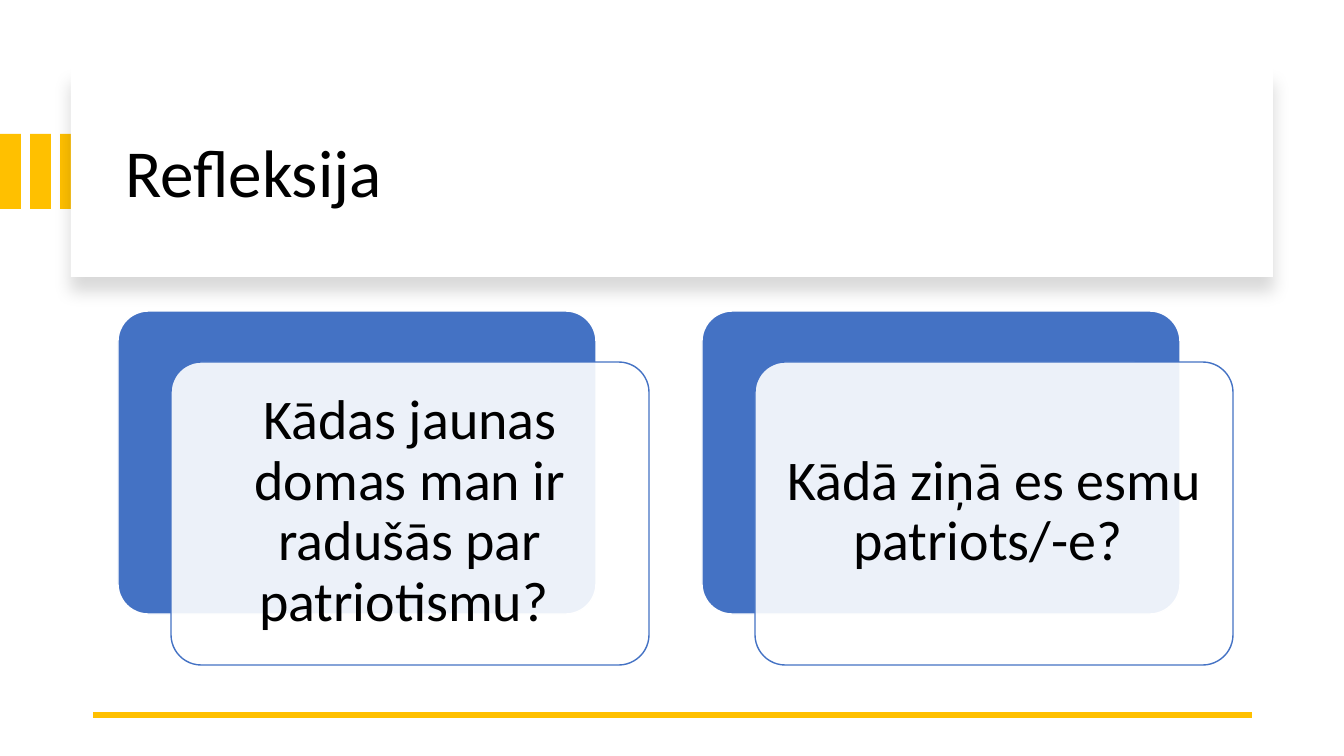
from lxml.etree import SubElement
from pptx import Presentation
from pptx.dml.color import RGBColor
from pptx.enum.shapes import MSO_CONNECTOR as CONNECTOR, MSO_SHAPE as SHAPE
from pptx.enum.text import MSO_ANCHOR as ANCHOR, PP_ALIGN as ALIGN
from pptx.oxml.ns import qn
from pptx.util import Emu, Pt

EMU_PER_PX = 914400 / 100.8
GOLD, BLUE, WHITE, BLACK = "FFC000", "4472C4", "FFFFFF", "000000"


def px(n):
    return Emu(round(n * EMU_PER_PX))


def rgb(hex_color):
    return RGBColor.from_string(hex_color)


def set_alpha(color, percent):
    """Add opacity to a colour element."""
    SubElement(color, qn("a:alpha"), val=str(percent * 1000))


class SlideBuilder:
    font = "Calibri"
    line_spacing = 0.9

    def __init__(self, slide):
        self.shapes = slide.shapes

    def box(self, x, y, w, h, fill, line=None, corner=None, opacity=100):
        kind = SHAPE.RECTANGLE if corner is None else SHAPE.ROUNDED_RECTANGLE
        s = self.shapes.add_shape(kind, px(x), px(y), px(w), px(h))
        s.shadow.inherit = False
        if corner is not None:
            s.adjustments[0] = corner
        s.fill.solid()
        s.fill.fore_color.rgb = rgb(fill)
        if opacity < 100:
            set_alpha(s.fill._xPr.find(".//" + qn("a:srgbClr")), opacity)
        if line:
            s.line.color.rgb = rgb(line)
            s.line.width = Pt(1)
        else:
            s.line.fill.background()
        return s

    def drop_shadow(self, s, blur, distance, opacity):
        """Cast a black shadow straight down; blur and distance in points."""
        effects = s._element.spPr.find(qn("a:effectLst"))
        shadow = SubElement(effects, qn("a:outerShdw"), blurRad=str(Pt(blur)),
                            dist=str(Pt(distance)), dir="5400000",
                            algn="t", rotWithShape="0")
        set_alpha(SubElement(shadow, qn("a:srgbClr"), val=BLACK), opacity)

    def text(self, text, x, y, w, h, size, align=ALIGN.LEFT, inset=10):
        tf = self.shapes.add_textbox(px(x), px(y), px(w), px(h)).text_frame
        tf.word_wrap = True
        tf.vertical_anchor = ANCHOR.MIDDLE
        tf.margin_left = tf.margin_right = px(inset)
        tf.margin_top = tf.margin_bottom = px(inset)
        p = tf.paragraphs[0]
        p.alignment = align
        p.line_spacing = self.line_spacing
        r = p.add_run()
        r.text = text
        r.font.name = self.font
        r.font.size = Pt(size)
        r.font.color.rgb = rgb(BLACK)

    def line(self, x1, y1, x2, y2, color, width):
        c = self.shapes.add_connector(CONNECTOR.STRAIGHT,
                                      px(x1), px(y1), px(x2), px(y2))
        c.line.color.rgb = rgb(color)
        c.line.width = Pt(width)
        SubElement(c._element.spPr, qn("a:effectLst"))

    def question_card(self, x, y, question):
        """Blue card with a translucent white card offset in front."""
        w, h = 478, 303
        self.box(x, y, w, h, BLUE, line=WHITE, corner=0.1)
        self.box(x + 53, y + 51, w, h, WHITE, line=BLUE, corner=0.1, opacity=90)
        self.text(question, x + 62, y + 59, 460, 285, 40, ALIGN.CENTER, inset=17)


def main():
    prs = Presentation()
    prs.slide_width, prs.slide_height = px(1344), px(756)
    builder = SlideBuilder(prs.slides.add_slide(prs.slide_layouts[6]))

    for i in range(3):
        builder.box(i * 30, 134, 21, 75, GOLD)
    panel = builder.box(71, 68, 1202, 209, WHITE)
    builder.drop_shadow(panel, blur=11, distance=10, opacity=15)
    builder.text("Refleksija", 115, 90, 1122, 171, 48)
    builder.line(1252, 715, 93, 715, GOLD, 4.5)

    questions = ["Kādas jaunas domas man ir radušās par patriotismu? ",
                 "Kādā ziņā es esmu patriots/-e? "]
    for i, question in enumerate(questions):
        builder.question_card(118 + i * 584, 311, question)

    prs.save("out.pptx")


if __name__ == "__main__":
    main()
